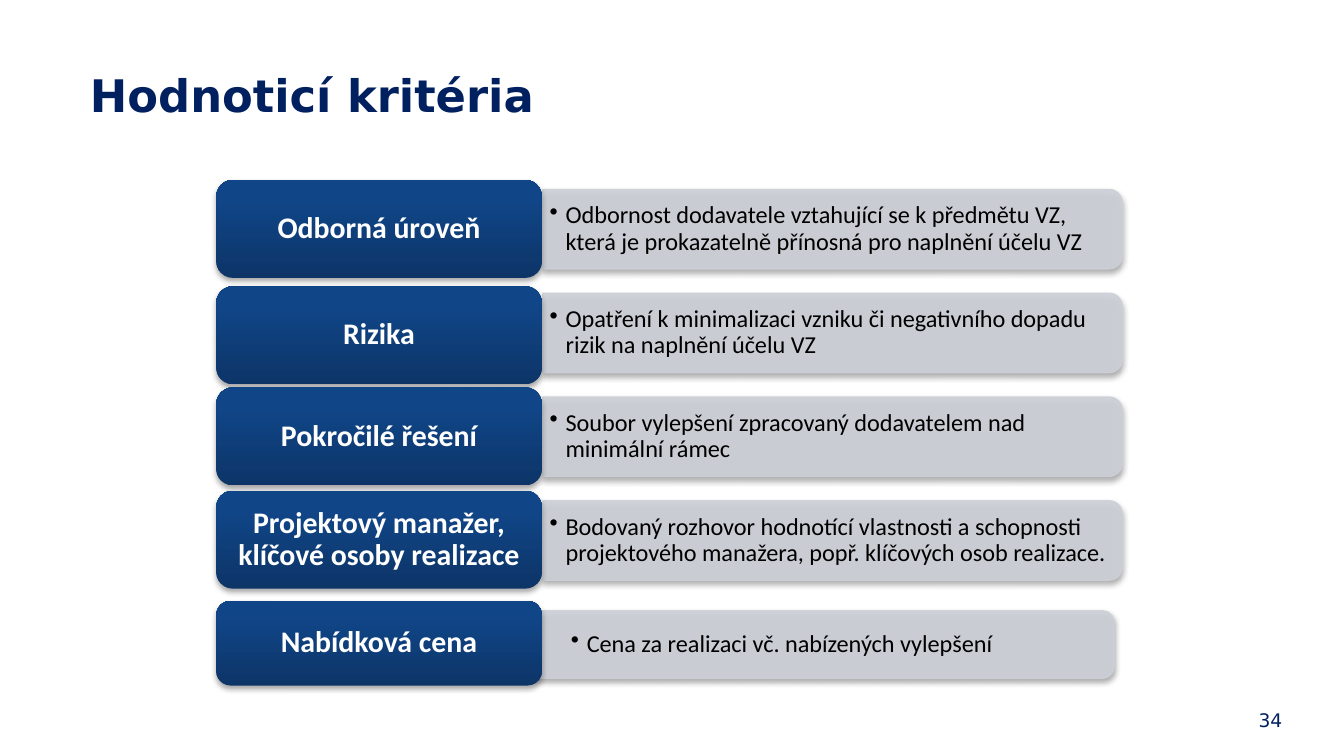
from copy import deepcopy

from lxml import etree
from pptx import Presentation
from pptx import util as u
from pptx.dml.color import RGBColor
from pptx.enum import shapes, text
from pptx.oxml.ns import qn

Cm = u.Cm
COLORS = {
    "navy": "002060",
    "bar": "CDD0D7",
    "label_dark": "0D3568",
    "label_mid": "104587",
    "label_light": "0E458A",
    "white": "FFFFFF",
    "black": "000000",
}
CRITERIA = [
    ("Odborná úroveň",
     "Odbornost dodavatele vztahující se k předmětu VZ, "
     "která je prokazatelně přínosná pro naplnění účelu VZ"),
    ("Rizika",
     "Opatření k minimalizaci vzniku či negativního dopadu "
     "rizik na naplnění účelu VZ"),
    ("Pokročilé řešení",
     "Soubor vylepšení zpracovaný dodavatelem nad minimální rámec"),
    ("Projektový manažer, klíčové osoby realizace",
     "Bodovaný rozhovor hodnotící vlastnosti a schopnosti "
     "projektového manažera, popř. klíčových osob realizace."),
]
PRICE = ("Nabídková cena", "Cena za realizaci vč. nabízených vylepšení")

# Lengths in cm
LABEL_LEFT, LABEL_WIDTH, LABEL_HEIGHT = 4.09, 6.15, 1.85
LABEL_TOPS = [3.4, 5.41, 7.32, 9.27]
BAR_LEFT, BAR_WIDTH, BAR_HEIGHT = 10.26, 10.95, 1.5
BAR_TOP, BAR_PITCH = 3.58, 1.96


def rgb(name):
    return RGBColor.from_string(COLORS[name])


def write(shape, words, size, color, font="Calibri", bold=False,
          align=text.PP_ALIGN.LEFT, anchor=text.MSO_ANCHOR.MIDDLE,
          insets=(0.25, 0.13), spacing=None, bullet=False):
    frame = shape.text_frame
    frame.word_wrap = True
    frame.auto_size = text.MSO_AUTO_SIZE.NONE
    frame.vertical_anchor = anchor
    frame.margin_left = frame.margin_right = Cm(insets[0])
    frame.margin_top = frame.margin_bottom = Cm(insets[1])
    paragraph = frame.paragraphs[0]
    paragraph.alignment = align
    paragraph.line_spacing = spacing
    run = paragraph.add_run()
    run.text = words
    run.font.name, run.font.size, run.font.bold = font, u.Pt(size), bold
    run.font.color.rgb = rgb(color)
    if bullet:
        props = paragraph._p.get_or_add_pPr()
        props.set("marL", str(Cm(0.3)))
        props.set("indent", str(-Cm(0.3)))
        etree.SubElement(props, qn("a:buChar"), char="•")


def set_alpha(color_element, percent):
    etree.SubElement(color_element, qn("a:alpha"), val=str(percent * 1000))


def add_shadow(shape):
    shape.shadow.inherit = False
    effects = shape._element.spPr.find(qn("a:effectLst"))
    shadow = etree.SubElement(
        effects, qn("a:outerShdw"), blurRad=str(u.Pt(3.1)),
        dist=str(u.Pt(1.8)), dir="5400000", rotWithShape="0")
    set_alpha(etree.SubElement(shadow, qn("a:srgbClr"), val=COLORS["black"]), 35)


def add_bar(slide, box, detail, insets):
    """Bar rounded on its right side, with the bulleted detail over it."""
    left, top, width, height = box
    shift = (width - height) / 2
    bar = slide.shapes.add_shape(
        shapes.MSO_SHAPE.ROUND_2_SAME_RECTANGLE,
        Cm(left + shift), Cm(top - shift), Cm(height), Cm(width))
    bar.rotation = 90
    bar.fill.solid()
    bar.fill.fore_color.rgb = rgb("bar")
    bar.line.color.rgb = rgb("bar")
    bar.line.width = u.Pt(0.75)
    for color in bar._element.spPr.iter(qn("a:srgbClr")):
        set_alpha(color, 90)
    add_shadow(bar)
    detail_box = slide.shapes.add_textbox(
        Cm(left), Cm(top + 0.07), Cm(width - 0.07), Cm(height - 0.14))
    write(detail_box, detail, 13, "black", insets=insets, spacing=0.9, bullet=True)


def add_label(slide, box, name):
    label = slide.shapes.add_shape(
        shapes.MSO_SHAPE.ROUNDED_RECTANGLE, *map(Cm, box))
    label.fill.gradient()
    label.fill.gradient_angle = 90
    stops = label._element.spPr.find(qn("a:gradFill")).find(qn("a:gsLst"))
    stops.append(deepcopy(stops[0]))
    shades = [(0, "label_dark"), (0.8, "label_mid"), (1, "label_light")]
    for stop, (position, color) in zip(label.fill.gradient_stops, shades):
        stop.position = position
        stop.color.rgb = rgb(color)
    label.line.fill.background()
    add_shadow(label)
    write(label, name, 16, "white", bold=True, align=text.PP_ALIGN.CENTER,
          insets=(0.27, 0.16), spacing=0.9)


def add_criterion(slide, criterion, label_box, bar_box, insets=(0.13, 0.08)):
    name, detail = criterion
    add_bar(slide, bar_box, detail, insets)
    add_label(slide, label_box, name)


def add_heading(slide, box, words):
    title = slide.shapes.title
    title.left, title.top, title.width, title.height = map(Cm, box)
    write(title, words, 24, "navy", font="DejaVu Sans", bold=True,
          anchor=text.MSO_ANCHOR.TOP)


def add_page_number(slide, box, number):
    page_number = slide.shapes.add_textbox(*map(Cm, box))
    write(page_number, number, 10, "navy", font="DejaVu Sans",
          align=text.PP_ALIGN.CENTER, anchor=text.MSO_ANCHOR.TOP)


def main():
    deck = Presentation()
    deck.slide_width, deck.slide_height = Cm(25.4), Cm(14.28)
    slide = deck.slides.add_slide(deck.slide_layouts[5])
    add_heading(slide, (1.45, 1.14, 19.05, 2.24), "Hodnoticí kritéria")
    for row, (criterion, label_top) in enumerate(zip(CRITERIA, LABEL_TOPS)):
        add_criterion(
            slide, criterion,
            (LABEL_LEFT, label_top, LABEL_WIDTH, LABEL_HEIGHT),
            (BAR_LEFT, BAR_TOP + row * BAR_PITCH, BAR_WIDTH, BAR_HEIGHT))
    add_criterion(slide, PRICE, (LABEL_LEFT, 11.35, LABEL_WIDTH, 1.6),
                  (10.1, 11.54, BAR_WIDTH, 1.27), insets=(0.69, 0.36))
    add_page_number(slide, (23.11, 13.26, 1.8, 0.69), "34")
    deck.save("out.pptx")


if __name__ == "__main__":
    main()
